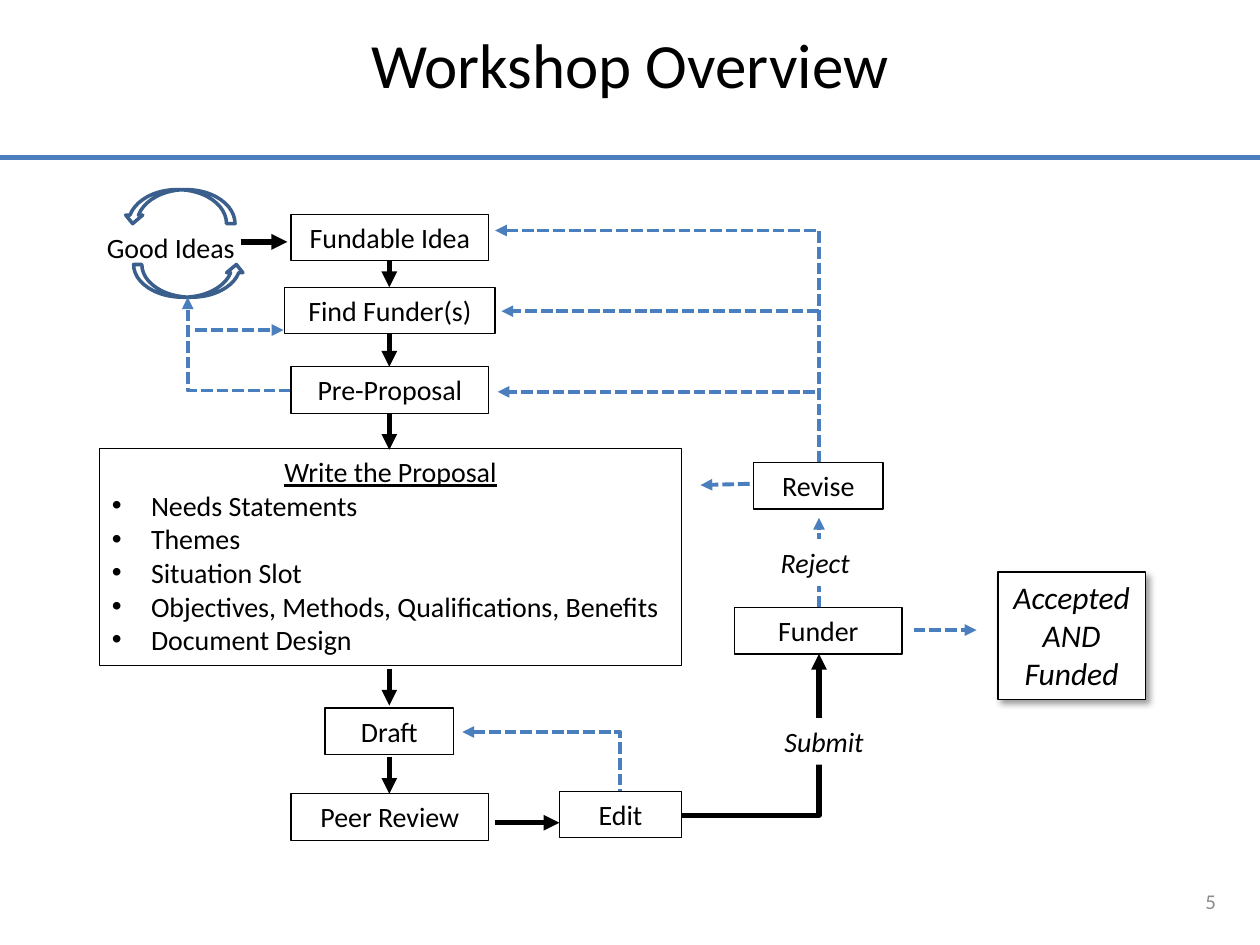
from lxml.etree import SubElement
from pptx import Presentation
from pptx.dml.color import RGBColor
from pptx.enum.dml import MSO_LINE
from pptx.enum.shapes import MSO_CONNECTOR as Conn, MSO_SHAPE as Shape
from pptx.enum.text import MSO_ANCHOR as Anchor, MSO_AUTO_SIZE as AutoSize, PP_ALIGN as Align
from pptx.oxml.ns import qn
from pptx.util import Inches, Pt

BLACK, WHITE, BLUE, DARK_BLUE, GREY = "000000", "FFFFFF", "4B7EBC", "3A5F8C", "8C8C8C"
SPINE = 3.09       # centre of the main column of steps
FUNDER_X = 6.5     # centre of the funder column
STEP_HEIGHT = 0.37
TOPICS = ["Needs Statements", "Themes", "Situation Slot",
          "Objectives, Methods, Qualifications, Benefits", "Document Design"]


def color(value):
    return RGBColor.from_string(value)


def add_text(paragraph, text, size=16, ink=BLACK, align=Align.CENTER, **style):
    paragraph.alignment = align
    run = paragraph.add_run()
    run.text = text
    run.font.color.rgb = color(ink)
    for key, value in {"name": "Calibri", "size": Pt(size), **style}.items():
        setattr(run.font, key, value)


def add_label(slide, text, box, anchor=Anchor.TOP, **style):
    frame = slide.shapes.add_textbox(*map(Inches, box)).text_frame
    frame.word_wrap = True
    frame.vertical_anchor = anchor
    add_text(frame.paragraphs[0], text, **style)


def add_box(slide, text, box, fill=None, outline=True, **style):
    rect = slide.shapes.add_shape(Shape.RECTANGLE, *map(Inches, box))
    rect.shadow.inherit = False
    if fill:
        rect.fill.solid()
        rect.fill.fore_color.rgb = color(fill)
    else:
        rect.fill.background()
    if outline:
        rect.line.color.rgb = color(BLACK)
        rect.line.width = Pt(0.75)
    else:
        rect.line.fill.background()
    frame = rect.text_frame
    frame.word_wrap = True
    frame.auto_size = AutoSize.SHAPE_TO_FIT_TEXT
    frame.vertical_anchor = Anchor.TOP
    add_text(frame.paragraphs[0], text, **style)
    return rect


def add_bullet(frame, text):
    paragraph = frame.add_paragraph()
    props = paragraph._p.get_or_add_pPr()
    props.set("marL", str(Inches(0.31)))
    props.set("indent", str(-Inches(0.31)))
    SubElement(props, qn("a:buFont"), typeface="Arial")
    SubElement(props, qn("a:buChar"), char="•")
    add_text(paragraph, text, align=Align.LEFT)


def add_soft_shadow(shape):
    effects = shape._element.spPr.find(qn("a:effectLst"))
    shadow = SubElement(effects, qn("a:outerShdw"), blurRad=str(Pt(4)), dist=str(Pt(3)),
                        dir=str(45 * 60000), algn="tl", rotWithShape="0")
    ink = SubElement(shadow, qn("a:srgbClr"), val=BLACK)
    SubElement(ink, qn("a:alpha"), val="40000")


def add_line(slide, start, end, ink=BLACK, width=3, arrow="tailEnd", bent=False):
    """Draw a line; a bent one leaves start horizontally and meets end vertically."""
    line = slide.shapes.add_connector(Conn.ELBOW if bent else Conn.STRAIGHT,
                                      *map(Inches, (*start, *end)))
    props = line._element.spPr
    if bent:
        props.find(qn("a:prstGeom")).set("prst", "bentConnector2")
    line.line.color.rgb = color(ink)
    line.line.width = Pt(width)
    if arrow:
        SubElement(line.line._get_or_add_ln(), qn(f"a:{arrow}"), type="triangle")
    SubElement(props, qn("a:effectLst"))
    return line


def add_feedback(slide, start, end, **options):
    line = add_line(slide, start, end, ink=BLUE, width=2.25, **options)
    dash = line.line
    head = [end for end in dash._ln if end.tag in (qn("a:headEnd"), qn("a:tailEnd"))]
    dash.dash_style = MSO_LINE.SQUARE_DOT
    for arrow in head:
        dash._ln.append(arrow)  # arrowheads follow the dash in the schema


def add_cycle_arrow(slide, box, flipped=False):
    arrow = slide.shapes.add_shape(Shape.CURVED_RIGHT_ARROW, *map(Inches, box))
    arrow.shadow.inherit = False
    arrow.fill.background()
    arrow.line.color.rgb = color(DARK_BLUE)
    arrow.line.width = Pt(2)
    arrow.rotation = 90
    if flipped:
        for axis in ("flipH", "flipV"):
            arrow._element.spPr.xfrm.set(axis, "1")


def add_lines(slide):
    for top, bottom in [(2.07, 2.28), (2.65, 2.91), (3.28, 3.57), (5.31, 5.6), (6.01, 6.3)]:
        add_line(slide, (SPINE, top), (SPINE, bottom))
    add_line(slide, (1.91, 1.92), (2.28, 1.92))
    add_line(slide, (3.93, 6.53), (4.44, 6.53))
    add_line(slide, (5.41, 6.47), (FUNDER_X, 5.19), bent=True)

    for start, end in [((1.55, 2.62), (2.25, 2.62)),
                       ((FUNDER_X, 4.82), (FUNDER_X, 4.11)),
                       ((7.25, 5), (7.75, 5)),
                       ((FUNDER_X, 2.47), (3.98, 2.47)),
                       ((6.47, 3.11), (3.95, 3.11)),
                       ((5.95, 3.84), (5.56, 3.85))]:
        add_feedback(slide, start, end)
    add_feedback(slide, (2.31, 3.1), (1.49, 2.36), bent=True)
    add_feedback(slide, (3.67, 5.81), (4.92, 6.28), bent=True, arrow="headEnd")
    add_feedback(slide, (3.93, 1.83), (FUNDER_X, 3.67), bent=True, arrow="headEnd")


def add_steps(slide):
    for name, left, top, width in [("Fundable Idea", 2.31, 1.7, 1.57),
                                   ("Find Funder(s)", 2.26, 2.28, 1.67),
                                   ("Pre-Proposal", 2.31, 2.91, 1.57),
                                   ("Draft", 2.58, 5.62, 1.02),
                                   ("Peer Review", 2.31, 6.3, 1.57),
                                   ("Edit", 4.44, 6.28, 0.97),
                                   ("Revise", 5.98, 3.67, 1.03)]:
        add_box(slide, name, (left, top, width, STEP_HEIGHT))
    add_box(slide, "Funder", (5.83, 4.82, 1.33, STEP_HEIGHT), fill=WHITE)
    for name, left, top in [("Submit", 6.07, 5.7), ("Reject", 6, 4.28)]:
        add_box(slide, name, (left, top, 0.94, STEP_HEIGHT), fill=WHITE,
                outline=False, italic=True)

    proposal = add_box(slide, "Write the Proposal", (0.79, 3.56, 4.62, 1.72), underline=True)
    for topic in TOPICS:
        add_bullet(proposal.text_frame, topic)
    accepted = add_box(slide, "Accepted AND Funded", (7.92, 4.54, 1.17, 1.01),
                       fill=WHITE, size=18, italic=True)
    add_soft_shadow(accepted)


def main():
    deck = Presentation()
    deck.slide_width, deck.slide_height = Inches(10), Inches(7.5)
    slide = deck.slides.add_slide(deck.slide_layouts[6])

    add_line(slide, (0, 1.25), (10, 1.25), ink=BLUE, arrow=None)
    add_label(slide, "Workshop Overview", (0.5, 0, 9, 1.01), anchor=Anchor.MIDDLE, size=36)
    add_label(slide, "5", (7.42, 6.95, 2.33, 0.4), anchor=Anchor.MIDDLE,
              size=12, ink=GREY, align=Align.RIGHT)
    add_cycle_arrow(slide, (1.37, 1.79, 0.26, 0.88), flipped=True)
    add_cycle_arrow(slide, (1.29, 1.2, 0.27, 0.88))
    add_label(slide, "Good Ideas", (0.75, 1.78, 1.34, 0.29), align=Align.LEFT)
    add_lines(slide)
    add_steps(slide)
    deck.save("out.pptx")


if __name__ == "__main__":
    main()
